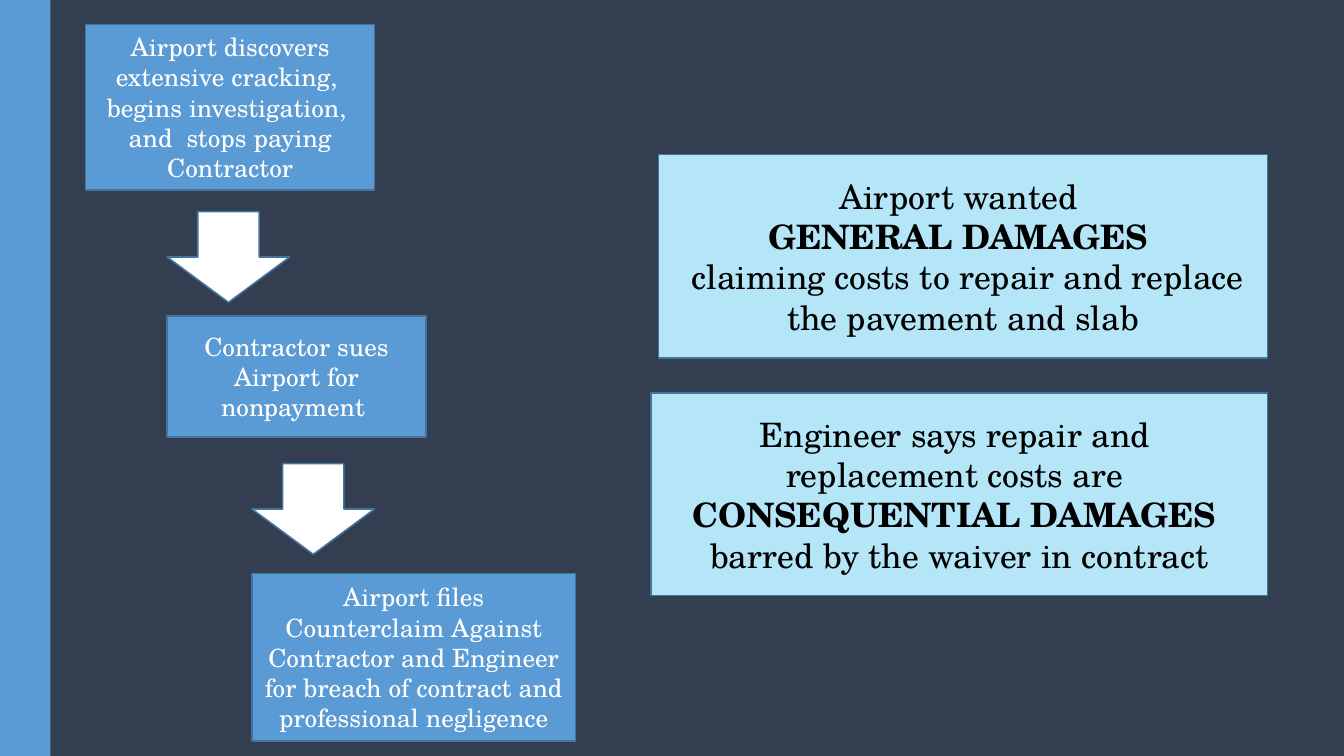
from dataclasses import dataclass

from pptx import Presentation
from pptx.dml.color import RGBColor
from pptx.enum.shapes import MSO_SHAPE as Shape
from pptx.enum.text import MSO_ANCHOR as Anchor, PP_ALIGN as Align
from pptx.util import Inches, Pt

COLORS = {
    "background": "333F50",
    "blue": "5B9BD5",
    "outline": "43739E",
    "pale": "B4E6F8",
    "white": "FFFFFF",
    "black": "000000",
}
FONT = "TeX Gyre Schola"
COLUMNS, ROWS = 160, 90
BAR_COLUMNS = 6
ARROW_COLUMNS, ARROW_ROWS = 14.6, 10.8


@dataclass(frozen=True)
class Box:
    col: float
    row: float
    cols: float
    rows: float
    lines: tuple[str, ...]
    bold_line: int | None = None


@dataclass(frozen=True)
class Arrow:
    col: float
    row: float


EVENTS = (
    Box(10.2, 2.9, 34.4, 19.7, (
        "Airport discovers extensive cracking, ",
        "begins investigation, ",
        "and  stops paying Contractor",
    )),
    Box(19.9, 37.6, 30.8, 14.4, ("Contractor sues Airport for nonpayment ",)),
    Box(30, 68.3, 38.5, 19.9, (
        "Airport files Counterclaim Against Contractor and Engineer "
        "for breach of contract and professional negligence",
    )),
)
ARROWS = (Arrow(19.9, 25.2), Arrow(30, 55.2))
POSITIONS = (
    Box(78.4, 18.4, 72.5, 24.2, (
        "Airport wanted ",
        "GENERAL DAMAGES ",
        " claiming costs to repair and replace the pavement and slab",
    ), bold_line=1),
    Box(77.5, 46.8, 73.4, 24.1, (
        "Engineer says repair and ",
        "replacement costs are ",
        "CONSEQUENTIAL DAMAGES ",
        "barred by the waiver in contract",
    ), bold_line=2),
)

prs = Presentation()
prs.slide_width, prs.slide_height = Inches(13.33), Inches(7.5)
s = prs.slides.add_slide(prs.slide_layouts[6])


def rgb(name: str) -> RGBColor:
    return RGBColor.from_string(COLORS[name])


def add_cells(kind: Shape, col: float, row: float, cols: float, rows: float,
              fill: str, outlined: bool = True):
    """Add a filled shape placed in grid columns and rows."""
    cell_w, cell_h = prs.slide_width / COLUMNS, prs.slide_height / ROWS
    sp = s.shapes.add_shape(kind, round(col * cell_w), round(row * cell_h),
                            round(cols * cell_w), round(rows * cell_h))
    sp.shadow.inherit = False
    sp.fill.solid()
    sp.fill.fore_color.rgb = rgb(fill)
    if outlined:
        sp.line.color.rgb = rgb("outline")
        sp.line.width = Pt(1.1)
    else:
        sp.line.fill.background()
    return sp


def add_box(box: Box, fill: str, text_color: str, size: int) -> None:
    sp = add_cells(Shape.RECTANGLE, box.col, box.row, box.cols, box.rows, fill)
    tf = sp.text_frame
    tf.word_wrap = True
    tf.vertical_anchor = Anchor.MIDDLE
    for i, line in enumerate(box.lines):
        p = tf.paragraphs[0] if i == 0 else tf.add_paragraph()
        p.text = line
        p.alignment = Align.CENTER
        p.font.name = FONT
        p.font.size = Pt(size)
        p.font.bold = i == box.bold_line
        p.font.color.rgb = rgb(text_color)


def main() -> None:
    s.background.fill.solid()
    s.background.fill.fore_color.rgb = rgb("background")
    add_cells(Shape.RECTANGLE, 0, 0, BAR_COLUMNS, ROWS, "blue", outlined=False)
    for event in EVENTS:
        add_box(event, "blue", "white", 18)
    for arrow in ARROWS:
        add_cells(Shape.DOWN_ARROW, arrow.col, arrow.row,
                  ARROW_COLUMNS, ARROW_ROWS, "white")
    for position in POSITIONS:
        add_box(position, "pale", "black", 24)
    prs.save("out.pptx")


if __name__ == "__main__":
    main()
